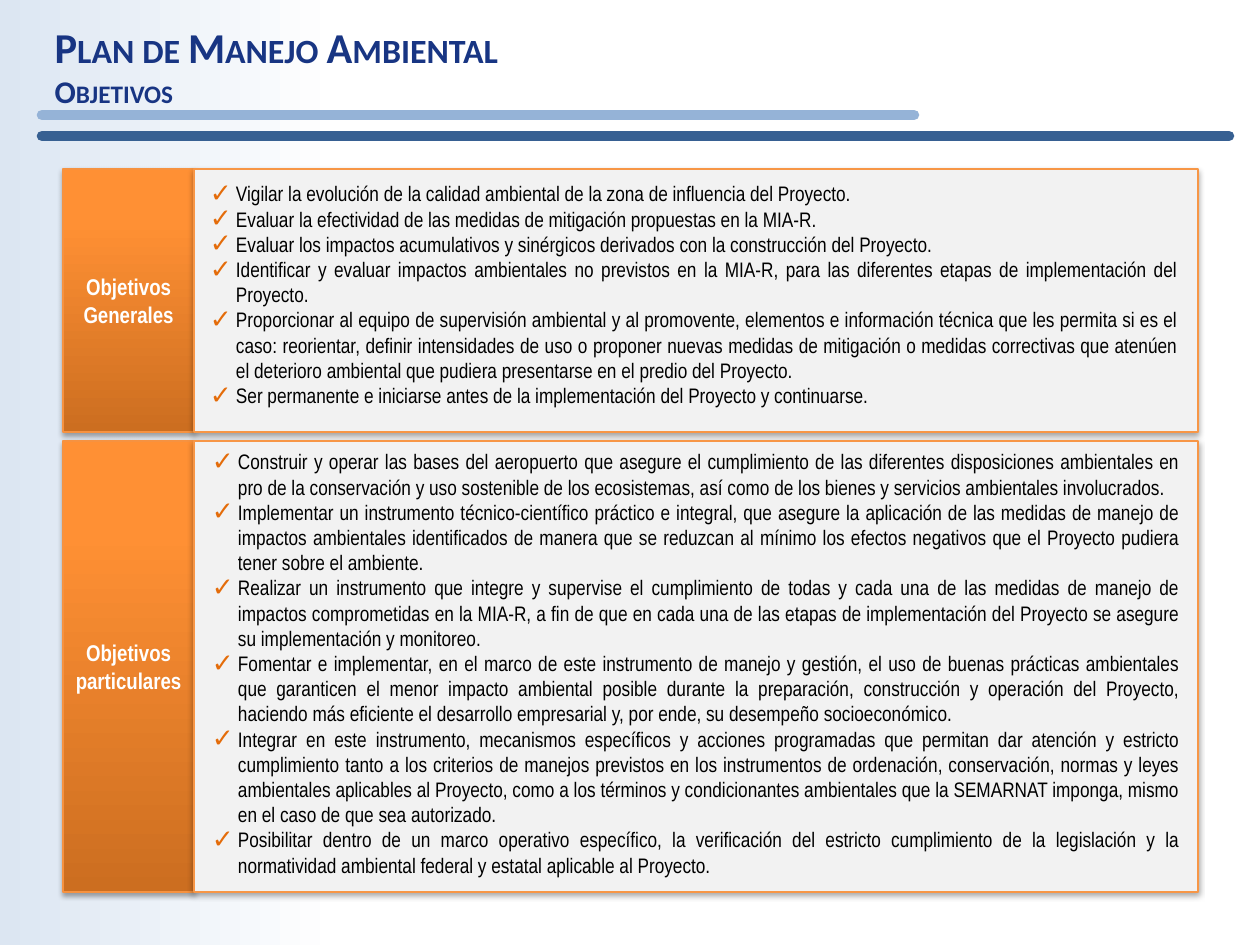
import copy

import pptx
import pptx.dml.color
import pptx.enum.shapes
import pptx.enum.text
import pptx.oxml
import pptx.oxml.ns
import pptx.util

EMU_PER_PX = 914400 / 126
COLORS = {
    "title": "183583", "rule_light": "95B3D7", "rule_dark": "376092",
    "sky": "DCE6F2", "white": "FFFFFF", "black": "000000", "panel": "F2F2F2",
    "panel_line": "F79646", "label_line": "F69240", "check": "E46C0A",
    "orange_dark": "CC6E20", "orange": "FF9034", "orange_light": "FF9136",
}
TITLE_FONT = {"name": "Calibri", "bold": True}
LABEL_FONT = {"name": "Arial Narrow", "size": pptx.util.Pt(13), "bold": True}
LIST_FONT = {"name": "Arial Narrow", "size": pptx.util.Pt(12), "bold": False}
NO_MARGINS = {"margin_left": 0, "margin_top": 0, "margin_right": 0, "margin_bottom": 0}
LABEL_STOPS = [(0, "orange_dark"), (0.8, "orange"), (1, "orange_light")]

GENERAL_GOALS = [
    "Vigilar la evolución de la calidad ambiental de la zona de influencia del Proyecto.",
    "Evaluar la efectividad de las medidas de mitigación propuestas en la MIA-R.",
    "Evaluar los impactos acumulativos y sinérgicos derivados con la construcción del Proyecto.",
    "Identificar y evaluar impactos ambientales no previstos en la MIA-R, para las diferentes "
    "etapas de implementación del Proyecto.",
    "Proporcionar al equipo de supervisión ambiental y al promovente, elementos e información "
    "técnica que les permita si es el caso: reorientar, definir intensidades de uso o proponer "
    "nuevas medidas de mitigación o medidas correctivas que atenúen el deterioro ambiental que "
    "pudiera presentarse en el predio del Proyecto.",
    "Ser permanente e iniciarse antes de la implementación del Proyecto y continuarse.",
]
SPECIFIC_GOALS = [
    "Construir y operar las bases del aeropuerto que asegure el cumplimiento de las diferentes "
    "disposiciones ambientales en pro de la conservación y uso sostenible de los ecosistemas, "
    "así como de los bienes y servicios ambientales involucrados.",
    "Implementar un instrumento técnico-científico práctico e integral, que asegure la "
    "aplicación de las medidas de manejo de impactos ambientales identificados de manera que se "
    "reduzcan al mínimo los efectos negativos que el Proyecto pudiera tener sobre el ambiente.",
    "Realizar un instrumento que integre y supervise el cumplimiento de todas y cada una de las "
    "medidas de manejo de impactos comprometidas en la MIA-R, a fin de que en cada una de las "
    "etapas de implementación del Proyecto se asegure su implementación y monitoreo.",
    "Fomentar e implementar, en el marco de este instrumento de manejo y gestión, el uso de "
    "buenas prácticas ambientales que garanticen el menor impacto ambiental posible durante la "
    "preparación, construcción y operación del Proyecto, haciendo más eficiente el desarrollo "
    "empresarial y, por ende, su desempeño socioeconómico.",
    "Integrar en este instrumento, mecanismos específicos y acciones programadas que permitan "
    "dar atención y estricto cumplimiento tanto a los criterios de manejos previstos en los "
    "instrumentos de ordenación, conservación, normas y leyes ambientales aplicables al "
    "Proyecto, como a los términos y condicionantes ambientales que la SEMARNAT imponga, mismo "
    "en el caso de que sea autorizado.",
    "Posibilitar dentro de un marco operativo específico, la verificación del estricto "
    "cumplimiento de la legislación y la normatividad ambiental federal y estatal aplicable al "
    "Proyecto.",
]


def px(length):
    """Turn px into EMU."""
    return pptx.util.Emu(round(length * EMU_PER_PX))


def rgb(name):
    """Return the named colour."""
    return pptx.dml.color.RGBColor.from_string(COLORS[name])


def apply_format(target, values):
    """Set each attribute of the target from a dict."""
    for name, value in values.items():
        setattr(target, name, value)


def place(shape, left, top, width, height):
    """Move and size a shape in px."""
    apply_format(shape, {"left": px(left), "top": px(top),
                         "width": px(width), "height": px(height)})


def add_xml(parent, markup):
    """Append an element of the drawing namespace."""
    tag, rest = markup.split(" ", 1) if " " in markup else (markup, "")
    namespace = pptx.oxml.ns.nsdecls("a")
    element = pptx.oxml.parse_xml(f"<a:{tag} {namespace} {rest}/>")
    parent.append(element)
    return element


def add_text(paragraph, text, font, color):
    """Add a formatted run."""
    run = paragraph.add_run()
    run.text = text
    apply_format(run.font, font)
    run.font.color.rgb = rgb(color)
    return run


def fill_gradient(fill, owner, stops, angle):
    """Give a fill a linear gradient with any number of stops."""
    fill.gradient()
    fill.gradient_angle = angle
    stop_list = owner.find(".//" + pptx.oxml.ns.qn("a:gsLst"))
    for _ in stops[2:]:
        stop_list.append(copy.deepcopy(stop_list[-1]))
    for stop, (position, color) in zip(fill.gradient_stops, stops):
        stop.position = position
        stop.color.rgb = rgb(color)


def add_card(slide, box, line_color):
    """Add an outlined rectangle with a soft shadow below."""
    shape = slide.shapes.add_shape(pptx.enum.shapes.MSO_SHAPE.RECTANGLE, *map(px, box))
    shape.line.color.rgb = rgb(line_color)
    shape.line.width = pptx.util.Pt(0.75)
    shape.shadow.inherit = False
    effects = shape.element.spPr.find(pptx.oxml.ns.qn("a:effectLst"))
    shadow = add_xml(effects, 'outerShdw blurRad="40000" dist="23000" dir="5400000" rotWithShape="0"')
    add_xml(add_xml(shadow, f'srgbClr val="{COLORS["black"]}"'), 'alpha val="35000"')
    return shape


def add_rule(slide, left, right, y, color):
    """Add a thick line with round ends."""
    rule = slide.shapes.add_connector(
        pptx.enum.shapes.MSO_CONNECTOR.STRAIGHT, px(left), px(y), px(right), px(y))
    rule.line.color.rgb = rgb(color)
    rule.line.width = pptx.util.Pt(6)
    rule.line._get_or_add_ln().set("cap", "rnd")
    add_xml(rule.element.spPr, "effectLst")


def build_header(slide, left, top, width, height):
    """Place the two-line title and the rules beneath it."""
    add_rule(slide, left, left + 1187, top + 115, "rule_dark")
    add_rule(slide, left, left + 872, top + 94, "rule_light")
    title = slide.shapes.title
    place(title, left, top, width, height)
    apply_format(title.text_frame, {"auto_size": pptx.enum.text.MSO_AUTO_SIZE.NONE,
                                    "vertical_anchor": pptx.enum.text.MSO_ANCHOR.MIDDLE})
    paragraph = title.text_frame.paragraphs[0]
    paragraph.alignment = pptx.enum.text.PP_ALIGN.LEFT
    for text, size in (("Plan de Manejo Ambiental", 24.3), ("Objetivos", 18)):
        if paragraph.runs:
            paragraph.add_line_break()
        run = add_text(paragraph, text, TITLE_FONT | {"size": pptx.util.Pt(size)}, "title")
        run.font._element.set("cap", "small")


def fill_checklist(placeholder, goals):
    """Write justified goals with check marks."""
    frame = placeholder.text_frame
    apply_format(frame, NO_MARGINS | {"word_wrap": True,
                                      "auto_size": pptx.enum.text.MSO_AUTO_SIZE.SHAPE_TO_FIT_TEXT})
    for index, goal in enumerate(goals):
        paragraph = frame.add_paragraph() if index else frame.paragraphs[0]
        apply_format(paragraph, {"alignment": pptx.enum.text.PP_ALIGN.JUSTIFY,
                                 "space_before": 0, "space_after": 0})
        add_text(paragraph, goal, LIST_FONT, "black")
        properties = paragraph._p.get_or_add_pPr()
        properties.set("marL", str(px(28)))
        properties.set("indent", str(px(-26)))
        add_xml(add_xml(properties, "buClr"), f'srgbClr val="{COLORS["check"]}"')
        add_xml(properties, 'buSzPct val="125000"')
        add_xml(properties, 'buFont typeface="Arial"')
        add_xml(properties, 'buChar char="✓"')


def build_section(slide, box, heading, placeholder, goals, inset):
    """Place an orange label, its panel and the checklist inside the box."""
    left, top, width, height = box
    label_width = 131
    label = add_card(slide, (left, top, label_width, height), "label_line")
    fill_gradient(label.fill, label.element, LABEL_STOPS, 90)
    apply_format(label.text_frame, NO_MARGINS | {
        "word_wrap": True, "vertical_anchor": pptx.enum.text.MSO_ANCHOR.MIDDLE})
    paragraph = label.text_frame.paragraphs[0]
    apply_format(paragraph, {"alignment": pptx.enum.text.PP_ALIGN.CENTER,
                             "space_after": pptx.util.Pt(15)})
    add_text(paragraph, heading, LABEL_FONT, "white")

    panel_left = left + label_width
    panel = add_card(slide, (panel_left, top, width - label_width, height), "panel_line")
    panel.fill.solid()
    panel.fill.fore_color.rgb = rgb("panel")
    inset_x, inset_y = inset
    place(placeholder, panel_left + inset_x, top + inset_y, 970, height - 2 * inset_y)
    fill_checklist(placeholder, goals)
    panel.element.addnext(placeholder.element)


def main():
    """Build and save the presentation."""
    presentation = pptx.Presentation()
    presentation.slide_width, presentation.slide_height = px(1260), px(945)
    slide = presentation.slides.add_slide(presentation.slide_layouts[3])
    fill_gradient(slide.background.fill, slide.element, [(0, "sky"), (0.27, "white")], 0)
    build_header(slide, 42, 21, 1139, 88)
    _, general, specific = slide.placeholders
    build_section(slide, (63, 169, 1135, 263), "Objetivos Generales", general,
                  GENERAL_GOALS, (14, 12))
    build_section(slide, (63, 441, 1135, 451), "Objetivos particulares", specific,
                  SPECIFIC_GOALS, (16, 8))
    presentation.save("out.pptx")


if __name__ == "__main__":
    main()
